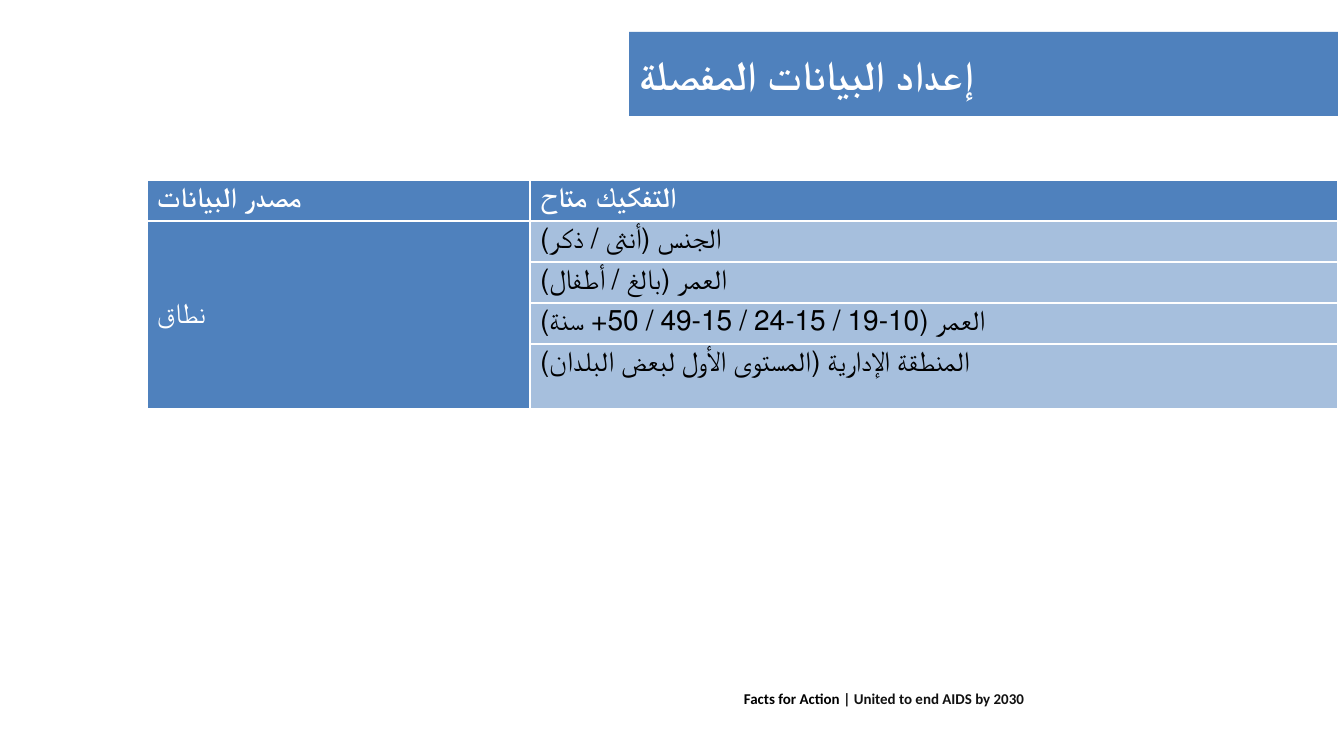
import pptx
import pptx.dml.color
import pptx.enum.text
import pptx.oxml
import pptx.oxml.ns
import pptx.util

PX = 914400 / 100.8
COLORS = {"blue": "4F81BD", "white": "FFFFFF", "black": "000000", "footer": "111111"}
HEADERS = ["مصدر البيانات", "التفكيك متاح"]
SOURCE = "نطاق"
BREAKDOWNS = [
    "الجنس (أنثى / ذكر)",
    "العمر (بالغ / أطفال)",
    "العمر (10-19 / 15-24 / 15-49 / 50+ سنة)",
    "المنطقة الإدارية (المستوى الأول لبعض البلدان)",
]
COLUMN_WIDTHS = [383, 808]
ROW_HEIGHTS = [41, 41, 41, 41, 65]


def px(*lengths):
    return [pptx.util.Emu(round(length * PX)) for length in lengths]


def write_arabic(text_frame, text, size, font_name, color, bold):
    """Set one right-to-left paragraph that is aligned to the left."""
    paragraph = text_frame.paragraphs[0]
    paragraph.text = text
    paragraph.alignment = pptx.enum.text.PP_ALIGN.LEFT
    paragraph._p.get_or_add_pPr().set("rtl", "1")
    font = paragraph.runs[0].font
    font.size = pptx.util.Pt(size)
    font.name = font_name
    font.bold = bold
    font.color.rgb = pptx.dml.color.RGBColor.from_string(COLORS[color])


presentation = pptx.Presentation()
presentation.slide_width, presentation.slide_height = px(1344, 756)
slide = presentation.slides.add_slide(presentation.slide_layouts[5])

# Title
title = slide.shapes.title
title.left, title.top, title.width, title.height = px(629, 32, 709, 84)
title.fill.solid()
title.fill.fore_color.rgb = pptx.dml.color.RGBColor.from_string(COLORS["blue"])
title.text_frame.vertical_anchor = pptx.enum.text.MSO_ANCHOR.MIDDLE
write_arabic(title.text_frame, "إعداد البيانات المفصلة", 29.3, "Calibri", "white", True)

# Table
table = slide.shapes.add_table(
    len(ROW_HEIGHTS), len(COLUMN_WIDTHS), *px(147, 180, sum(COLUMN_WIDTHS), sum(ROW_HEIGHTS))
).table
table.first_col = True
table.horz_banding = False
for column, width in zip(table.columns, px(*COLUMN_WIDTHS)):
    column.width = width
for row, height in zip(table.rows, px(*ROW_HEIGHTS)):
    row.height = height
for row in table.rows:
    for cell in row.cells:
        cell.fill.solid()
        cell.fill.fore_color.rgb = pptx.dml.color.RGBColor.from_string(COLORS["blue"])

for column_index, (header, font_name) in enumerate(zip(HEADERS, ["Calibri", "Roboto"])):
    write_arabic(table.cell(0, column_index).text_frame, header, 20, font_name, "white", True)

source_cell = table.cell(1, 0)
source_cell.merge(table.cell(len(BREAKDOWNS), 0))
source_cell.vertical_anchor = pptx.enum.text.MSO_ANCHOR.MIDDLE
write_arabic(source_cell.text_frame, SOURCE, 20, "Calibri", "white", False)

for row_index, breakdown in enumerate(BREAKDOWNS, start=1):
    cell = table.cell(row_index, 1)
    write_arabic(cell.text_frame, breakdown, 20, "Roboto", "black", False)
    fill_color = cell._tc.tcPr.find(".//" + pptx.oxml.ns.qn("a:srgbClr"))
    alpha = pptx.oxml.parse_xml(f'<a:alpha {pptx.oxml.ns.nsdecls("a")} val="50000"/>')
    fill_color.append(alpha)

# Footer
footer = slide.shapes.add_textbox(*px(734, 685, 308, 28))
footer.text_frame.word_wrap = True
paragraph = footer.text_frame.paragraphs[0]
for text, color in [("Facts for Action ", "black"), ("| United to end AIDS by 2030", "footer")]:
    run = paragraph.add_run()
    run.text = text
    run.font.size = pptx.util.Pt(10.7)
    run.font.name = "Calibri"
    run.font.bold = True
    run.font.color.rgb = pptx.dml.color.RGBColor.from_string(COLORS[color])

presentation.save("out.pptx")
